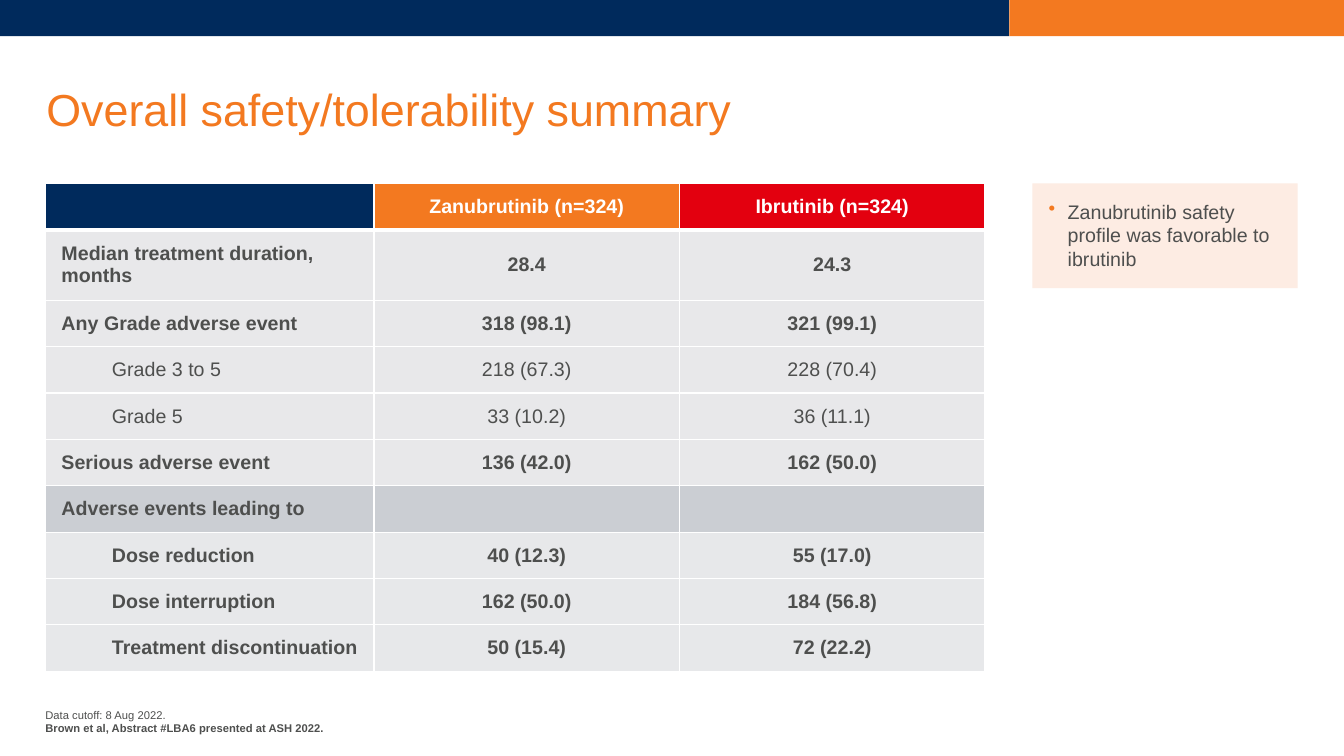
"""Build the overall safety and tolerability summary slide."""
from typing import NamedTuple, Optional

from lxml.etree import SubElement
from pptx import Presentation
from pptx.dml.color import RGBColor
from pptx.enum.shapes import MSO_SHAPE
from pptx.enum.text import MSO_ANCHOR, PP_ALIGN
from pptx.oxml import parse_xml
from pptx.oxml.ns import nsdecls, qn
from pptx.util import Inches, Pt

NAVY = RGBColor(0x00, 0x2A, 0x5C)
ORANGE = RGBColor(0xF3, 0x79, 0x20)
RED = RGBColor(0xE3, 0x00, 0x0F)
WHITE = RGBColor(0xFF, 0xFF, 0xFF)
TEXT_GREY = RGBColor(0x4E, 0x4F, 0x4E)
LIGHT_GREY = RGBColor(0xE8, 0xE8, 0xEA)
PALE_GREY = RGBColor(0xE7, 0xE8, 0xEA)
SECTION_GREY = RGBColor(0xCB, 0xCE, 0xD3)
PEACH = RGBColor(0xFD, 0xEC, 0xE3)

FONT = "Arial"
COLUMN_WIDTHS = (3.26, 3.03, 3.03)
ROW_HEIGHT = 0.46
TALL_ROW_HEIGHT = 0.7


class Box(NamedTuple):
    left: float
    top: float
    width: float
    height: float


class Row(NamedTuple):
    label: str
    zanubrutinib: str = ""
    ibrutinib: str = ""
    fill: RGBColor = LIGHT_GREY
    bold: bool = True
    indented: bool = False
    height: float = ROW_HEIGHT


HEADER_FILLS = (NAVY, ORANGE, RED)
HEADER_TEXTS = ("", "Zanubrutinib (n=324)", "Ibrutinib (n=324)")
ROWS = (
    Row("Median treatment duration, months", "28.4", "24.3", height=TALL_ROW_HEIGHT),
    Row("Any Grade adverse event", "318 (98.1)", "321 (99.1)"),
    Row("Grade 3 to 5", "218 (67.3)", "228 (70.4)", bold=False, indented=True),
    Row("Grade 5", "33 (10.2)", "36 (11.1)", bold=False, indented=True),
    Row("Serious adverse event", "136 (42.0)", "162 (50.0)"),
    Row("Adverse events leading to", fill=SECTION_GREY),
    Row("Dose reduction", "40 (12.3)", "55 (17.0)", PALE_GREY, indented=True),
    Row("Dose interruption", "162 (50.0)", "184 (56.8)", PALE_GREY, indented=True),
    Row("Treatment discontinuation", "50 (15.4)", "72 (22.2)", PALE_GREY, indented=True),
)


def emu(box: Box) -> list:
    return [Inches(length) for length in box]


def style(paragraph, size: float, color: RGBColor, bold: bool = False) -> None:
    font = paragraph.font
    font.name, font.size, font.bold = FONT, Pt(size), bold
    font.color.rgb = color


def set_margins(target, left: float, top: float, right: float, bottom: float) -> None:
    target.margin_left, target.margin_top = Inches(left), Inches(top)
    target.margin_right, target.margin_bottom = Inches(right), Inches(bottom)


def add_rectangle(slide, box: Box, fill: RGBColor):
    shape = slide.shapes.add_shape(MSO_SHAPE.RECTANGLE, *emu(box))
    shape.shadow.inherit = False
    shape.fill.solid()
    shape.fill.fore_color.rgb = fill
    shape.line.fill.background()
    return shape


def add_text(slide, box: Box, lines: tuple, size: float, color: RGBColor,
             anchor: MSO_ANCHOR, bold_lines: tuple = (),
             line_spacing: Optional[float] = None) -> None:
    frame = slide.shapes.add_textbox(*emu(box)).text_frame
    frame.word_wrap = True
    frame.vertical_anchor = anchor
    set_margins(frame, 0, 0, 0, 0)
    for index, line in enumerate(lines):
        paragraph = frame.add_paragraph() if index else frame.paragraphs[0]
        paragraph.text = line
        paragraph.line_spacing = line_spacing
        style(paragraph, size, color, line in bold_lines)


def set_borders(cell, top: float = 1, bottom: float = 1) -> None:
    properties = cell._tc.get_or_add_tcPr()
    widths = {"lnL": 1, "lnR": 1, "lnT": top, "lnB": bottom}
    for position, (tag, width) in enumerate(widths.items()):
        properties.insert(position, parse_xml(
            f'<a:{tag} {nsdecls("a")} w="{Pt(width)}"><a:solidFill>'
            f'<a:srgbClr val="{WHITE}"/></a:solidFill></a:{tag}>'))


def fill_cell(cell, text: str, fill: RGBColor, color: RGBColor, bold: bool,
              centred: bool, indented: bool = False) -> None:
    cell.fill.solid()
    cell.fill.fore_color.rgb = fill
    cell.vertical_anchor = MSO_ANCHOR.MIDDLE
    set_margins(cell, 0.16, 0.08, 0.16, 0.08)
    paragraph = cell.text_frame.paragraphs[0]
    paragraph.text = text
    paragraph.alignment = PP_ALIGN.CENTER if centred else PP_ALIGN.LEFT
    if indented:
        paragraph.level = 1
        paragraph._p.get_or_add_pPr().set("marL", str(Inches(0.5)))
    style(paragraph, 14, color, bold)


def add_safety_table(slide) -> None:
    heights = [ROW_HEIGHT] + [row.height for row in ROWS]
    box = Box(0.45, 1.82, sum(COLUMN_WIDTHS), sum(heights))
    table = slide.shapes.add_table(len(heights), len(COLUMN_WIDTHS), *emu(box)).table
    for column, width in zip(table.columns, COLUMN_WIDTHS):
        column.width = Inches(width)
    for table_row, height in zip(table.rows, heights):
        table_row.height = Inches(height)
    for index, (text, fill) in enumerate(zip(HEADER_TEXTS, HEADER_FILLS)):
        cell = table.cell(0, index)
        fill_cell(cell, text, fill, WHITE, True, True)
        set_borders(cell, bottom=3)
    for row_index, row in enumerate(ROWS, start=1):
        for index, text in enumerate((row.label, row.zanubrutinib, row.ibrutinib)):
            cell = table.cell(row_index, index)
            fill_cell(cell, text, row.fill, TEXT_GREY, row.bold, index > 0,
                      row.indented and index == 0)
            set_borders(cell, top=3 if row_index == 1 else 1)


def add_callout(slide) -> None:
    frame = add_rectangle(slide, Box(10.24, 1.82, 2.63, 1.04), PEACH).text_frame
    frame.word_wrap = True
    frame.vertical_anchor = MSO_ANCHOR.TOP
    set_margins(frame, 0.16, 0.16, 0.1, 0.05)
    paragraph = frame.paragraphs[0]
    paragraph.text = "Zanubrutinib safety profile was favorable to ibrutinib"
    paragraph.alignment = PP_ALIGN.LEFT
    properties = paragraph._p.get_or_add_pPr()
    properties.set("marL", str(Inches(0.19)))
    properties.set("indent", str(Inches(-0.19)))
    bullet_color = SubElement(properties, qn("a:buClr"))
    SubElement(bullet_color, qn("a:srgbClr"), val=str(ORANGE))
    SubElement(properties, qn("a:buChar"), char="•")
    style(paragraph, 14, TEXT_GREY)


def main() -> None:
    presentation = Presentation()
    presentation.slide_width, presentation.slide_height = Inches(13.33), Inches(7.5)
    slide = presentation.slides.add_slide(presentation.slide_layouts[6])
    add_rectangle(slide, Box(0, 0, 10.01, 0.36), NAVY)
    add_rectangle(slide, Box(10.01, 0, 3.32, 0.36), ORANGE)
    citation = "Brown et al, Abstract #LBA6 presented at ASH 2022."
    add_text(slide, Box(0.45, 6.87, 9.33, 0.42), ("Data cutoff: 8 Aug 2022.", citation),
             8, TEXT_GREY, MSO_ANCHOR.BOTTOM, bold_lines=(citation,))
    add_text(slide, Box(0.46, 0.63, 12.43, 0.97), ("Overall safety/tolerability summary",),
             32, ORANGE, MSO_ANCHOR.MIDDLE, line_spacing=0.9)
    add_safety_table(slide)
    add_callout(slide)
    presentation.save("out.pptx")


if __name__ == "__main__":
    main()
